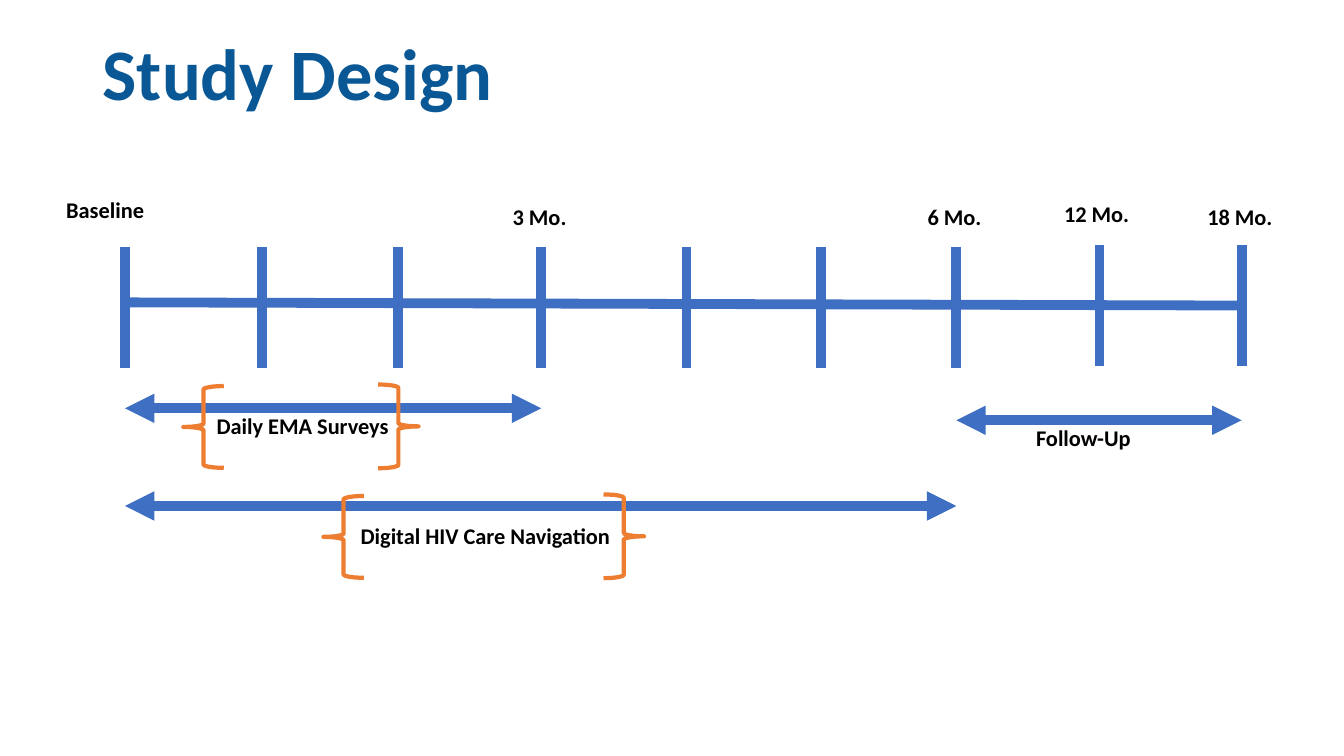
from lxml import etree
from pptx import Presentation
from pptx.dml.color import RGBColor
from pptx.enum.shapes import MSO_CONNECTOR as Connector, MSO_SHAPE as Shape
from pptx.enum.text import MSO_ANCHOR as Anchor, PP_ALIGN as Align
from pptx.oxml.ns import qn
from pptx.util import Cm, Pt

COLORS = {"title": "095895", "timeline": "3F6FC3", "brace": "ED7D31", "label": "000000"}
LABEL_HEIGHT = 0.91

# Tick positions along the axis, from baseline to 18 months
TICKS = [0, 3.45, 6.88, 10.49, 14.15, 17.53, 20.95, 24.56, 28.14]
TICK_HEIGHT = 3.05

# Text, left, top and width relative to the timeline, alignment
MILESTONES = [
    ("Baseline", -1.73, -1.39, 3.02, Align.LEFT),
    ("3 Mo.", 9.52, -1.22, 2.31, Align.LEFT),
    ("6 Mo. ", 19.56, -1.22, 2.82, Align.CENTER),
    ("12 Mo. ", 23.14, -1.29, 2.82, Align.CENTER),
    ("18 Mo. ", 26.75, -1.22, 2.82, Align.CENTER),
]

# Text, first and last tick, top, label left, drop and width, brace offsets
PHASES = [
    ("Daily EMA Surveys", 0, 3, 4.07, 2.06, -0.03, 5.99, (-0.59, 4.32)),
    ("Digital HIV Care Navigation", 0, 6, 6.53, 5.69, 0.28, 8.97, (-0.69, 6.37)),
    ("Follow-Up", 6, 8, 4.37, 22.71, -0.02, 3.68, None),
]


def color(name):
    return RGBColor.from_string(COLORS[name])


def add_text(slide, text, left, top, width, height, align=Align.LEFT,
             size=16, ink="label", anchor=Anchor.TOP, spacing=1.0):
    box = slide.shapes.add_textbox(Cm(left), Cm(top), Cm(width), Cm(height))
    frame = box.text_frame
    frame.word_wrap = True
    frame.vertical_anchor = anchor
    paragraph = frame.paragraphs[0]
    paragraph.text = text
    paragraph.alignment = align
    paragraph.line_spacing = spacing
    font = paragraph.font
    for name, value in {"name": "Calibri", "size": Pt(size), "bold": True}.items():
        setattr(font, name, value)
    font.color.rgb = color(ink)


def add_line(slide, x1, y1, x2, y2, arrows=False):
    line = slide.shapes.add_connector(
        Connector.STRAIGHT, Cm(x1), Cm(y1), Cm(x2), Cm(y2))
    line.line.color.rgb = color("timeline")
    line.line.width = Pt(7)
    if arrows:
        outline = line.line._get_or_add_ln()
        for end in ("a:headEnd", "a:tailEnd"):
            etree.SubElement(outline, qn(end), type="triangle")
    etree.SubElement(line._element.spPr, qn("a:effectLst"))


def add_brace(slide, kind, left, top, height):
    brace = slide.shapes.add_shape(kind, Cm(left), Cm(top), Cm(1.02), Cm(height))
    brace.shadow.inherit = False
    brace.fill.background()
    brace.line.color.rgb = color("brace")
    brace.line.width = Pt(3)


def add_title(slide, left, top, width, height):
    add_text(slide, "Study Design", left, top, width, height, size=51.8,
             ink="title", anchor=Anchor.MIDDLE, spacing=0.9)


def add_timeline(slide, left, top):
    # Axis and ticks; the last two ticks sit slightly higher
    add_line(slide, left + TICKS[-1], top + 1.48, left, top + 1.4)
    for index, offset in enumerate(TICKS):
        tick_top = top - (0.05 if index >= 7 else 0)
        add_line(slide, left + offset, tick_top, left + offset, tick_top + TICK_HEIGHT)
    # Milestone labels
    for text, dx, dy, width, align in MILESTONES:
        add_text(slide, text, left + dx, top + dy, width, LABEL_HEIGHT, align)


def add_phases(slide, left, top):
    for text, first, last, dy, dx, drop, width, braces in PHASES:
        arrow_top = top + dy
        label_left, label_top = left + dx, arrow_top + drop
        add_text(slide, text, label_left, label_top, width, LABEL_HEIGHT)
        add_line(slide, left + TICKS[first], arrow_top,
                 left + TICKS[last], arrow_top, arrows=True)
        if braces:
            opening, closing = braces
            add_brace(slide, Shape.LEFT_BRACE, label_left + opening, label_top - 0.53, 2.06)
            add_brace(slide, Shape.RIGHT_BRACE, label_left + closing, label_top - 0.57, 2.11)


def main():
    presentation = Presentation()
    presentation.slide_width = Cm(33.87)
    presentation.slide_height = Cm(19.05)
    slide = presentation.slides.add_slide(presentation.slide_layouts[6])
    add_title(slide, 2.34, 0.79, 29.21, 2.31)
    add_timeline(slide, 3.15, 6.22)
    add_phases(slide, 3.15, 6.22)
    presentation.save("out.pptx")


if __name__ == "__main__":
    main()
